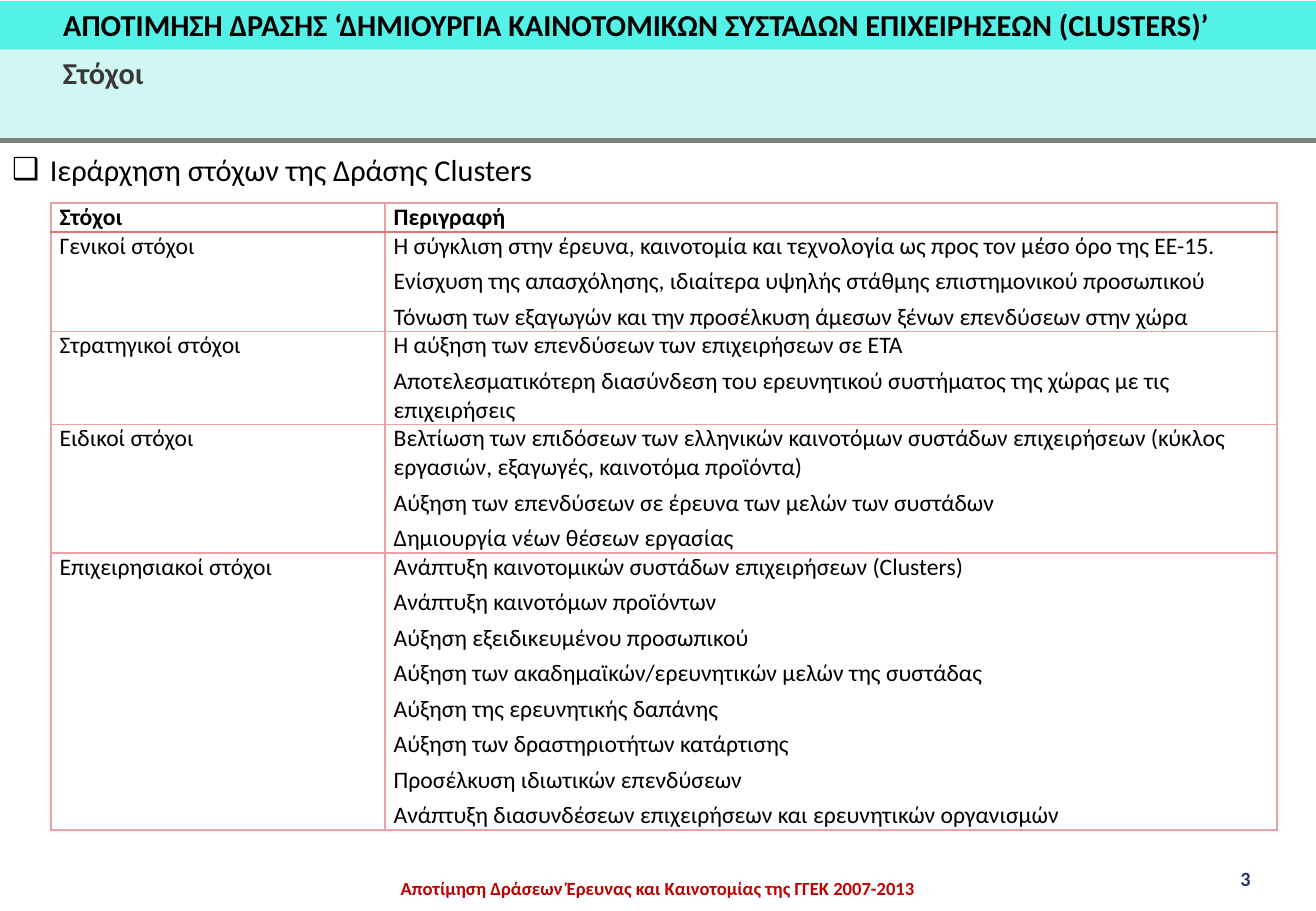
"""Build the slide on the goals of the Clusters action."""
from pptx import Presentation
from pptx.dml.color import RGBColor
from pptx.enum import shapes, text
from pptx.oxml import parse_xml, ns
from pptx.util import Inches, Pt

TITLE = "ΑΠΟΤΙΜΗΣΗ ΔΡΑΣΗΣ ‘ΔΗΜΙΟΥΡΓΙΑ ΚΑΙΝΟΤΟΜΙΚΩΝ ΣΥΣΤΑΔΩΝ ΕΠΙΧΕΙΡΗΣΕΩΝ (CLUSTERS)’"
TOPIC = "Στόχοι"
LEAD = "Ιεράρχηση στόχων της Δράσης Clusters"
FOOTER = "Aποτίμηση Δράσεων Έρευνας και Καινοτομίας της ΓΓΕΚ 2007-2013"
NUMBER = "3"
GOALS = [
    ("Στόχοι", ["Περιγραφή"]),
    ("Γενικοί στόχοι", [
        "Η σύγκλιση στην έρευνα, καινοτομία και τεχνολογία ως προς τον μέσο όρο της ΕΕ-15.",
        "Ενίσχυση της απασχόλησης, ιδιαίτερα υψηλής στάθμης επιστημονικού προσωπικού",
        "Τόνωση των εξαγωγών και την προσέλκυση άμεσων ξένων επενδύσεων στην χώρα"]),
    ("Στρατηγικοί στόχοι", [
        "Η αύξηση των επενδύσεων των επιχειρήσεων σε ΕΤΑ",
        "Αποτελεσματικότερη διασύνδεση του ερευνητικού συστήματος της χώρας με τις επιχειρήσεις"]),
    ("Ειδικοί στόχοι", [
        "Βελτίωση των επιδόσεων των ελληνικών καινοτόμων συστάδων επιχειρήσεων "
        "(κύκλος εργασιών, εξαγωγές, καινοτόμα προϊόντα)",
        "Αύξηση των επενδύσεων σε έρευνα των μελών των συστάδων",
        "Δημιουργία νέων θέσεων εργασίας"]),
    ("Επιχειρησιακοί στόχοι", [
        "Ανάπτυξη καινοτομικών συστάδων επιχειρήσεων (Clusters)",
        "Ανάπτυξη καινοτόμων προϊόντων",
        "Αύξηση εξειδικευμένου προσωπικού",
        "Αύξηση των ακαδημαϊκών/ερευνητικών μελών της συστάδας",
        "Αύξηση της ερευνητικής δαπάνης",
        "Αύξηση των δραστηριοτήτων κατάρτισης",
        "Προσέλκυση ιδιωτικών επενδύσεων",
        "Ανάπτυξη διασυνδέσεων επιχειρήσεων και ερευνητικών οργανισμών"]),
]
COLS = [2.75, 7.34]
ROWS = [0.23, 0.81, 0.76, 1.04, 2.26]
BANDS = [(0.01, 0.4, "53F1E8"), (0.41, 0.75, "D0F7F3")]
WIDE = 10.83


def paint(color):
    return RGBColor.from_string(color)


def write(frame, lines, size=18, color="000000", bold=False, gap=0,
          align=text.PP_ALIGN.LEFT, lead=1.0, bullet=None):
    for i, line in enumerate(lines):
        par = frame.paragraphs[0] if i == 0 else frame.add_paragraph()
        if bullet:
            props = par._p.get_or_add_pPr()
            props.set("marL", str(Inches(0.31)))
            props.set("indent", str(-Inches(0.31)))
            props.append(parse_xml(f'<a:buFont {ns.nsdecls("a")} typeface="Wingdings"/>'))
            props[-1].set("typeface", "Arial")
            props.append(parse_xml(f'<a:buChar {ns.nsdecls("a")} char="{bullet}"/>'))
        par.alignment, par.line_spacing = align, lead
        par.space_before, par.space_after = Pt(gap if i else 0), Pt(0)
        run = par.add_run()
        run.text = line
        font = run.font
        font.name, font.size, font.bold = "Calibri", Pt(size), bold
        font.color.rgb = paint(color)


def place(box, left, top, width, height, pad=(0.1, 0.05)):
    box.left, box.top = Inches(left), Inches(top)
    box.width, box.height = Inches(width), Inches(height)
    frame = box.text_frame
    frame.word_wrap, frame.auto_size = True, text.MSO_AUTO_SIZE.NONE
    frame.vertical_anchor = text.MSO_ANCHOR.TOP
    frame.margin_left = frame.margin_right = Inches(pad[0])
    frame.margin_top = frame.margin_bottom = Inches(pad[1])
    return frame


def border(cell, sides):
    props = cell._tc.get_or_add_tcPr()
    for i, (side, color, width) in enumerate(sides):
        props.insert(i, parse_xml(
            f'<a:ln{side} {ns.nsdecls("a")} w="{Pt(width)}"><a:solidFill>'
            f'<a:srgbClr val="{color}"/></a:solidFill></a:ln{side}>'))


def bands(slide):
    for top, height, color in BANDS:
        band = slide.shapes.add_shape(shapes.MSO_SHAPE.RECTANGLE, 0, Inches(top),
                                      Inches(WIDE), Inches(height))
        band.shadow.inherit = False
        band.fill.solid()
        band.fill.fore_color.rgb = paint(color)
        band.line.fill.background()
    rule = slide.shapes.add_connector(shapes.MSO_CONNECTOR.STRAIGHT, 0, Inches(1.16),
                                      Inches(WIDE), Inches(1.16))
    rule.line.color.rgb, rule.line.width = paint("808080"), Pt(3)
    rule._element.spPr.append(parse_xml(f'<a:effectLst {ns.nsdecls("a")}/>'))


def grid(slide):
    table = slide.shapes.add_table(len(ROWS), len(COLS), Inches(0.42), Inches(1.67),
                                   Inches(sum(COLS)), Inches(sum(ROWS))).table
    table.first_row = table.horz_banding = False
    for col, width in zip(table.columns, COLS):
        col.width = Inches(width)
    thin, thick = ("EDA1A5", 1), ("E47378", 1.5)
    for r, (name, items) in enumerate(GOALS):
        table.rows[r].height = Inches(ROWS[r])
        for c, lines in enumerate([[name], items]):
            cell = table.cell(r, c)
            cell.margin_left = cell.margin_right = Inches(0.07)
            cell.margin_top = cell.margin_bottom = 0
            cell.fill.background()
            border(cell, [("L", *thin), ("R", *thin),
                          ("T", *(thick if r == 1 else thin)),
                          ("B", *(thick if r == 0 else thin))])
            write(cell.text_frame, lines, size=14, bold=r == 0, gap=4)


def main():
    deck = Presentation()
    deck.slide_width, deck.slide_height = Inches(WIDE), Inches(7.5)
    slide = deck.slides.add_slide(deck.slide_layouts[1])
    title, body = slide.placeholders
    bands(slide)
    for holder in (title, body):
        holder.element.getparent().append(holder.element)
    write(place(title, 0.42, 0, 10.36, 0.4), [TITLE], bold=True)
    write(place(body, 0, 1.19, 7.44, 0.4), [LEAD], bullet="❑")
    grid(slide)

    def label(line, spot, pad=(0.1, 0.05), **form):
        box = slide.shapes.add_textbox(0, 0, 0, 0)
        write(place(box, *spot, pad=pad), [line], bold=True, **form)

    label(TOPIC, (0.42, 0.4, 0.93, 0.4), color="3B3838")
    label(NUMBER, (10.11, 7.08, 0.52, 0.3), size=12, color="203864")
    label(FOOTER, (2.82, 7.05, 5.19, 0.38), pad=(0, 0), size=11, color="C00000",
          align=text.PP_ALIGN.CENTER, lead=Pt(25.3))
    deck.save("out.pptx")


if __name__ == "__main__":
    main()
